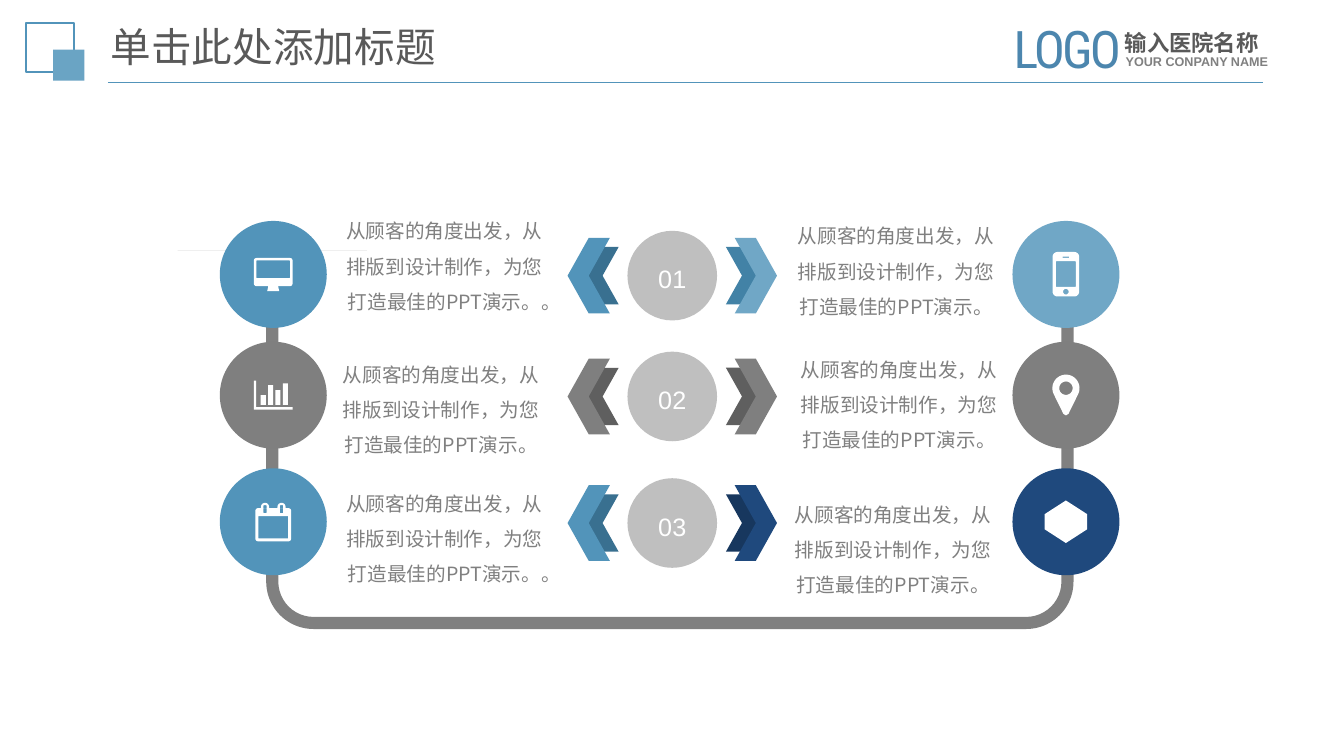
from math import cos, radians, sin

from lxml.etree import SubElement
from pptx import Presentation
from pptx.dml.color import RGBColor
from pptx.enum.shapes import MSO_CONNECTOR, MSO_SHAPE
from pptx.enum.text import MSO_ANCHOR, PP_ALIGN
from pptx.oxml.ns import qn
from pptx.util import Pt

COLORS = {
    "white": "FFFFFF", "title": "595959", "text": "808080", "logo": "4C86AE",
    "blue": "5294BA", "square": "6AA4C4", "blue_shade": "397090",
    "light": "70A7C6", "light_shade": "4282A6",
    "gray": "7F7F7F", "gray_shade": "5F5F5F", "pale": "BFBFBF",
    "navy": "1F497D", "navy_shade": "17375E",
}
SANS = "Noto Sans CJK SC"
MESSAGE = "从顾客的角度出发，从排版到设计制作，为您打造最佳的PPT演示。"


def color(name):
    return RGBColor.from_string(COLORS[name])


def write_text(shape, text, size=14, font=SANS, fill="text", bold=False, spacing=None,
               align=PP_ALIGN.LEFT, line_spacing=1.0, anchor=MSO_ANCHOR.TOP):
    frame = shape.text_frame
    frame.word_wrap = True
    frame.vertical_anchor = anchor
    paragraph = frame.paragraphs[0]
    paragraph.alignment = align
    paragraph.line_spacing = line_spacing
    run = paragraph.add_run()
    run.text = text
    run.font.size = Pt(size)
    run.font.name = font
    run.font.bold = bold
    run.font.color.rgb = color(fill)
    properties = run.font._element
    SubElement(properties, qn("a:ea")).set("typeface", font)
    if spacing is not None:
        properties.set("spc", str(spacing * 100))


def add_label(slide, box, text, **format_options):
    shape = slide.shapes.add_textbox(*map(Pt, box))
    write_text(shape, text, **format_options)


def paint(shape, fill=None, line=None, width=1.5):
    shape.shadow.inherit = False
    if fill:
        shape.fill.solid()
        shape.fill.fore_color.rgb = color(fill)
    else:
        shape.fill.background()
    if line:
        shape.line.color.rgb = color(line)
        shape.line.width = Pt(width)
    else:
        shape.line.fill.background()
    return shape


def add_block(slide, kind, box, fill=None, **line_options):
    return paint(slide.shapes.add_shape(kind, *map(Pt, box)), fill, **line_options)


def add_disc(slide, center_x, center_y, diameter, fill):
    box = (center_x - diameter / 2, center_y - diameter / 2, diameter, diameter)
    return add_block(slide, MSO_SHAPE.OVAL, box, fill)


# Icon outlines, in points around the centre of their disc
def arc(x, y, radius, start=0, end=360, steps=24):
    angles = [radians(start + (end - start) * i / steps) for i in range(steps + 1)]
    return [(x + radius * cos(a), y + radius * sin(a)) for a in angles]


def rounded(left, top, right, bottom, radius=0.0):
    if not radius:
        return [(left, top), (right, top), (right, bottom), (left, bottom)]
    corners = [(right - radius, bottom - radius), (left + radius, bottom - radius),
               (left + radius, top + radius), (right - radius, top + radius)]
    return [point for i, (x, y) in enumerate(corners)
            for point in arc(x, y, radius, 90 * i, 90 * i + 90, 6)]


def calendar_outlines():
    outlines = [rounded(-12.8, -9.7, 12.8, 14, 2), rounded(-10.7, -4, 10.7, 11.9)]
    for x in (-5.9, 5.9):
        outlines.append([(x - 2.9, -9.7)] + arc(x, -10.6, 2.9, 180, 360, 12) + [(x + 2.9, -9.7)])
        outlines.append(rounded(x - 1.1, -11.9, x + 1.1, -6.1, 0.5))
    return outlines


ICONS = {
    "monitor": [rounded(-13.8, -11.7, 13.8, 8.4, 1.8), rounded(-12, -10, 12, 2.7, 0.5),
                [(-3.5, 8.4), (3.5, 8.4), (4.3, 12), (-4.3, 12)]],
    "phone": [rounded(-9.5, -16, 9.5, 15.8, 3.5), rounded(-7.2, -9.4, 7.2, 9, 0.6),
              rounded(-2.4, -12.7, 2.4, -11.7, 0.4), arc(0, 12.4, 2)],
    "bars": [[(-13.8, -10.4), (-12.1, -10.4), (-12.1, 8.6), (13.8, 8.6), (13.8, 10.4),
              (-13.8, 10.4)]]
            + [rounded(-8.9 + 5.25 * i, top, -5.3 + 5.25 * i, 7)
               for i, top in enumerate((0, -7.2, -3.6, -8.4))],
    "pin": [arc(0, -5, 9.7, 155, 385) + [(1.8, 13.3), (0, 14.4), (-1.8, 13.3)],
            arc(0, -5, 4.8)],
    "calendar": calendar_outlines(),
    "hexagon": [[(0, -15.2), (15.2, -5.4), (15.2, 5.4), (0, 15.2), (-15.2, 5.4), (-15.2, -5.4)]],
}


def add_icon(slide, name, center_x, center_y):
    builder = None
    for outline in ICONS[name]:
        points = [(Pt(center_x + x), Pt(center_y + y)) for x, y in outline]
        if builder is None:
            builder = slide.shapes.build_freeform(*points[0])
        else:
            builder.move_to(*points[0])
        builder.add_line_segments(points[1:], close=True)
    paint(builder.convert_to_shape(), "white")


def add_header(slide, left, top, width):
    # Title and rule
    add_label(slide, (left + 54, top, 619, 34.6), "单击此处添加标题", size=29, fill="title",
              line_spacing=0.9, anchor=MSO_ANCHOR.MIDDLE)
    rule = slide.shapes.add_connector(MSO_CONNECTOR.STRAIGHT, Pt(left + 59), Pt(top + 41),
                                      Pt(left + width), Pt(top + 41))
    rule.line.color.rgb = color("blue")
    rule.line.width = Pt(1.25)
    SubElement(rule._element.spPr, qn("a:effectLst"))
    # Corner squares
    add_block(slide, MSO_SHAPE.RECTANGLE, (left + 0.4, top - 1.4, 34.8, 35), line="blue")
    add_block(slide, MSO_SHAPE.RECTANGLE, (left + 20, top + 17.4, 22.2, 22.2), "square")
    # Hospital name
    add_label(slide, (left + 778.3, top - 0.7, 126, 26.6), "输入医院名称", size=16,
              font="Calibri", fill="title", bold=True)
    add_label(slide, (left + 779, top + 17.3, 139, 18), "YOUR CONPANY NAME", size=9,
              font="Arial", bold=True)
    add_label(slide, (left + 699, top - 9.4, 101.5, 51.8), "LOGO", size=37,
              font="Roboto Condensed", fill="logo", spacing=-2)


def add_track(slide, left, top, width, height):
    track = add_block(slide, MSO_SHAPE.U_TURN_ARROW, (left, top, width, height), "text")
    track.rotation = 180
    for i, share in enumerate((8.66 / height, 0.25, 0, 0.125, 1)):
        track.adjustments[i] = share


def add_side(slide, axis, center_y, side, disc_x, icon, fill, shade, message, message_box):
    add_disc(slide, disc_x, center_y, 76.4, fill)
    add_icon(slide, icon, disc_x, center_y)
    add_label(slide, message_box, message, align=PP_ALIGN.CENTER, line_spacing=1.5)
    # Chevron pair, shaded one behind
    for distance, width, height, tone in ((49.8, 23, 41, shade), (59.7, 30.2, 54, fill)):
        center = axis + side * distance
        chevron = add_block(slide, MSO_SHAPE.CHEVRON,
                            (center - width / 2, center_y + 0.9 - height / 2, width, height), tone)
        chevron.rotation = 180 if side < 0 else 0


def add_row(slide, axis, center_y, number, left_side, right_side):
    add_side(slide, axis, center_y, -1, 195.2, *left_side)
    add_side(slide, axis, center_y, 1, 761.4, *right_side)
    disc = add_disc(slide, axis, center_y + 0.9, 64, "pale")
    write_text(disc, number, size=18, font="Arial", fill="white", align=PP_ALIGN.CENTER,
               line_spacing=1.2, anchor=MSO_ANCHOR.MIDDLE)


def main():
    presentation = Presentation()
    presentation.slide_width, presentation.slide_height = Pt(960), Pt(540)
    slide = presentation.slides.add_slide(presentation.slide_layouts[6])
    add_header(slide, 18, 18, 884)
    add_track(slide, 126.8, 178.7, 640, 270.6)
    rows = [
        (196,
         ("monitor", "blue", "blue_shade", MESSAGE + "。", (234.7, 144.7, 165.6, 83.5)),
         ("phone", "light", "light_shade", MESSAGE, (557.3, 148.3, 165.6, 83.5))),
        (282.3,
         ("bars", "gray", "gray_shade", MESSAGE, (236.2, 247, 157.7, 83.5)),
         ("pin", "gray", "gray_shade", MESSAGE, (562.3, 243.4, 159.8, 83.5))),
        (372.7,
         ("calendar", "blue", "blue_shade", MESSAGE + "。", (234.7, 339.1, 165.6, 83.5)),
         ("hexagon", "navy", "navy_shade", MESSAGE, (554.4, 347, 167, 83.5))),
    ]
    for index, (center_y, left_side, right_side) in enumerate(rows, 1):
        add_row(slide, 480.2, center_y, f"{index:02}", left_side, right_side)
    presentation.save("out.pptx")


if __name__ == "__main__":
    main()
